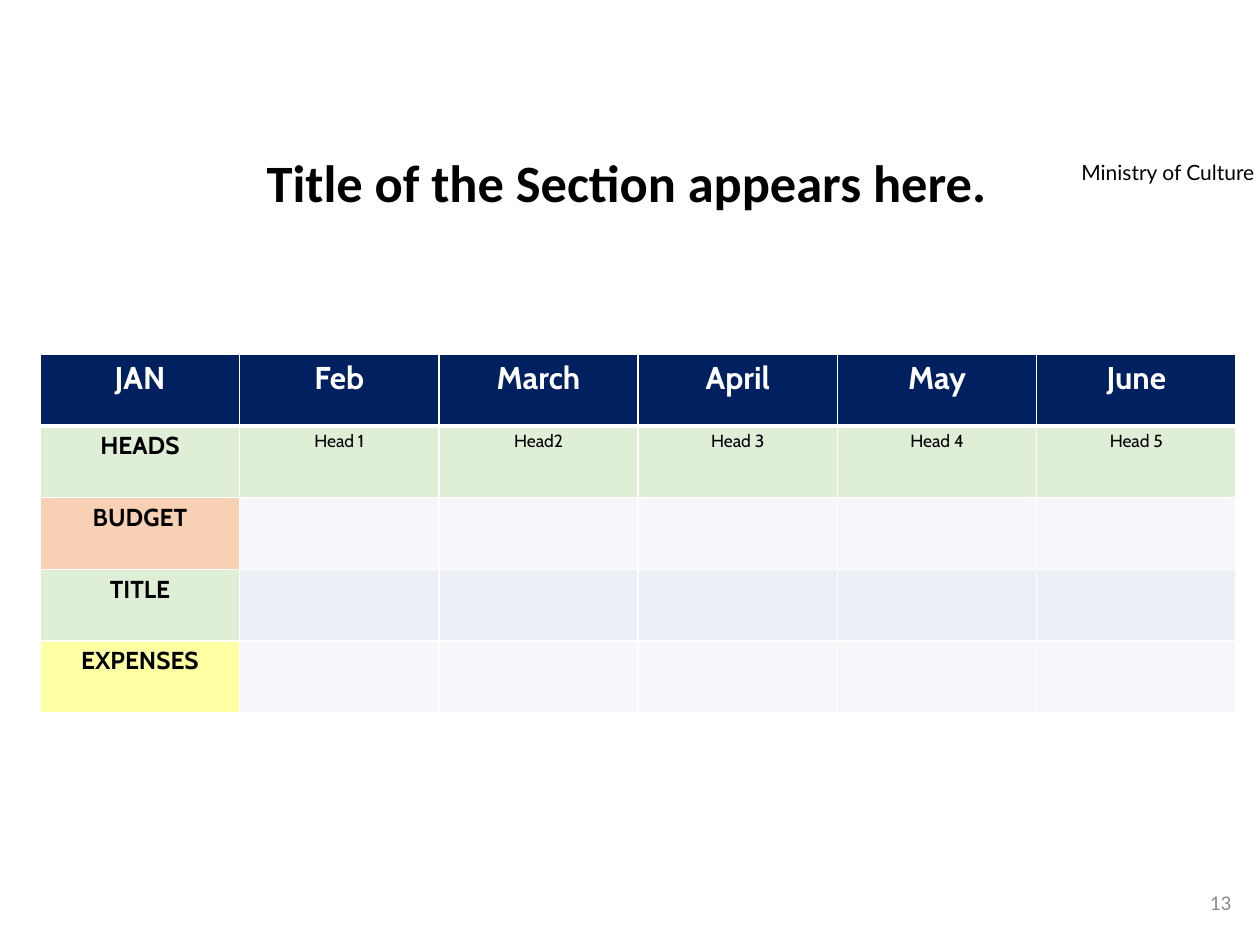
from lxml import etree
from pptx import Presentation
from pptx.dml.color import RGBColor
from pptx.enum.text import MSO_ANCHOR, MSO_AUTO_SIZE, PP_ALIGN
from pptx.oxml.ns import qn
from pptx.util import Inches, Pt

TOP, MIDDLE = MSO_ANCHOR.TOP, MSO_ANCHOR.MIDDLE
CENTER, RIGHT = PP_ALIGN.CENTER, PP_ALIGN.RIGHT
NO_FIT = MSO_AUTO_SIZE.NONE

NAVY, WHITE, BLACK, GRAY = "002060", "FFFFFF", "000000", "8C8C8C"
GREEN, ORANGE, YELLOW = "A9D18E", "ED7D31", "FFFF00"
PALE, BLUE = "E9EBF5", "CFD5EA"
ALPHA = 36

MONTHS = ["JAN", "Feb", "March", "April", "May", "June"]
HEADS = ["Head 1", "Head2", "Head 3", "Head 4", "Head 5"]
# Label, label fill, other cells, their fill
ROWS = [
    ("HEADS", GREEN, HEADS, GREEN),
    ("BUDGET", ORANGE, [""] * 5, PALE),
    ("TITLE", GREEN, [""] * 5, BLUE),
    ("EXPENSES", YELLOW, [""] * 5, PALE),
]

TITLE = {"name": "Calibri", "size": Pt(30), "bold": True}
MONTH = {"name": "Cabin", "size": Pt(18), "bold": True}
LABEL = {"name": "Cabin", "size": Pt(14), "bold": True}
HEAD = {"name": "Cabin", "size": Pt(10), "bold": False}
OWNER = {"name": "Lato", "size": Pt(12)}
NUMBER = {"name": "Calibri", "size": Pt(12)}


def paint(item, color):
    item.rgb = RGBColor.from_string(color)


def write(frame, text, style, color, align=CENTER):
    para = frame.paragraphs[0]
    para.text = text
    para.alignment = align
    for key, value in style.items():
        setattr(para.font, key, value)
    paint(para.font.color, color)
    return para


def add_title(slide, box):
    title = slide.shapes.title
    title.left, title.top, title.width, title.height = box
    frame = title.text_frame
    frame.auto_size, frame.vertical_anchor = NO_FIT, TOP
    para = write(frame, "Title of the Section appears here.", TITLE, BLACK)
    para.line_spacing = 0.9


def add_note(slide, box, text, style, color, align, anchor):
    frame = slide.shapes.add_textbox(*box).text_frame
    frame.word_wrap = True
    frame.vertical_anchor = anchor
    write(frame, text, style, color, align)


def add_edges(cell, top, bottom):
    props = cell._tc.get_or_add_tcPr()
    edges = [("L", 1), ("R", 1), ("T", top), ("B", bottom)]
    for place, (side, width) in enumerate(edges):
        line = etree.Element(qn(f"a:ln{side}"), w=str(Pt(width)))
        fill = etree.SubElement(line, qn("a:solidFill"))
        etree.SubElement(fill, qn("a:srgbClr"), val=WHITE)
        props.insert(place, line)


def fill_cell(cell, text, style, ink, fill, alpha=100, top=1, bottom=1):
    cell.margin_left = cell.margin_right = Inches(0.07)
    cell.margin_top = cell.margin_bottom = Inches(0.04)
    cell.fill.solid()
    paint(cell.fill.fore_color, fill)
    if alpha < 100:
        color = cell._tc.tcPr.find(f".//{qn('a:srgbClr')}")
        etree.SubElement(color, qn("a:alpha"), val=str(alpha * 1000))
    add_edges(cell, top, bottom)
    write(cell.text_frame, text, style, ink)


def add_grid(slide, box):
    table = slide.shapes.add_table(len(ROWS) + 1, len(MONTHS), *box).table

    # Month header
    for col, month in enumerate(MONTHS):
        fill_cell(table.cell(0, col), month, MONTH, WHITE, NAVY, bottom=3)

    # Labelled rows
    for row, (label, tint, texts, fill) in enumerate(ROWS, 1):
        top = 3 if row == 1 else 1
        fill_cell(table.cell(row, 0), label, LABEL, BLACK, tint, ALPHA, top)
        for col, text in enumerate(texts, 1):
            fill_cell(table.cell(row, col), text, HEAD, BLACK, fill, ALPHA, top)


def area(*sides):
    return [Inches(side) for side in sides]


def main():
    prs = Presentation()
    prs.slide_width, prs.slide_height = Inches(10), Inches(7.5)
    slide = prs.slides.add_slide(prs.slide_layouts[5])
    slide.background.fill.solid()
    paint(slide.background.fill.fore_color, WHITE)

    add_note(slide, area(8.18, 1.22, 2.18, 0.3), "Ministry of Culture",
             OWNER, BLACK, CENTER, TOP)
    add_grid(slide, area(0.32, 2.81, 9.49, 2.85))
    add_note(slide, area(7.62, 6.96, 2.25, 0.4), "13",
             NUMBER, GRAY, RIGHT, MIDDLE)
    add_title(slide, area(1.26, 1.2, 7.43, 0.79))
    prs.save("out.pptx")


if __name__ == "__main__":
    main()
